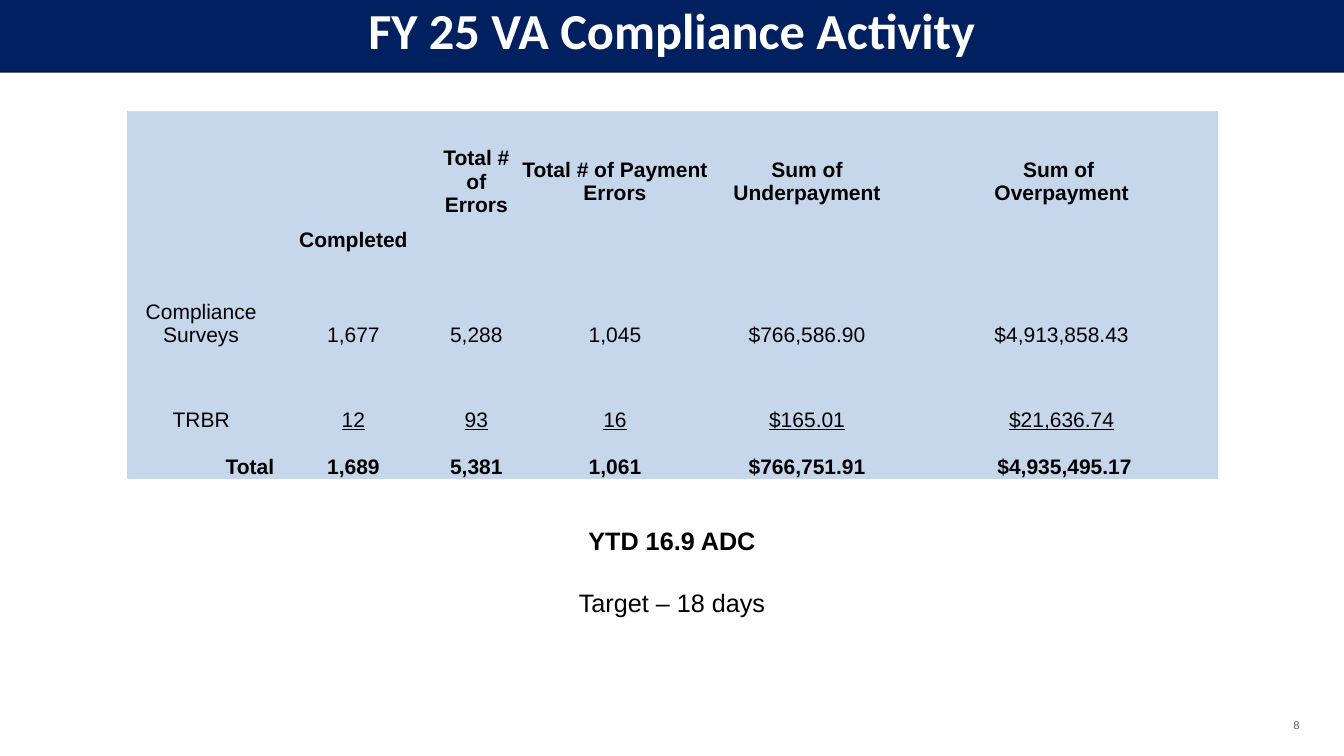
from pptx import Presentation
from pptx.dml.color import RGBColor
from pptx.enum.shapes import MSO_SHAPE
from pptx.enum.text import MSO_ANCHOR, MSO_AUTO_SIZE, PP_ALIGN
from pptx.util import Pt

PX = 9144  # 100 px to the inch
TOP, MIDDLE, BOTTOM = MSO_ANCHOR.TOP, MSO_ANCHOR.MIDDLE, MSO_ANCHOR.BOTTOM
CENTER, RIGHT = PP_ALIGN.CENTER, PP_ALIGN.RIGHT
NO_GRID_STYLE = "{2D5ABB26-0587-4C30-8999-92F81FD0307C}"
COLORS = {
    "navy": "002060",
    "shade": "13161E",
    "cell": "C7D7EB",
    "text": "000000",
    "white": "FFFFFF",
    "number": "595959",
}


def color(name):
    return RGBColor.from_string(COLORS[name])


def write(frame, text, size=15, font="Arial", ink="text", bold=False,
          underline=False, align=CENTER):
    """Fill a text frame, one paragraph for each line of text."""
    for index, line in enumerate(text.split("\n")):
        para = frame.paragraphs[0] if index == 0 else frame.add_paragraph()
        para.alignment = align
        span = para.add_run()
        span.text = line
        span.font.size = Pt(size)
        span.font.name = font
        span.font.bold = bold
        span.font.underline = underline
        span.font.color.rgb = color(ink)


deck = Presentation()
deck.slide_width, deck.slide_height = 1333 * PX, 750 * PX
page = deck.slides.add_slide(deck.slide_layouts[5])

# Title band, with a dark edge behind it
title = page.shapes.title
title.left, title.top, title.width, title.height = 0, -9 * PX, 1333 * PX, 80 * PX
title.fill.solid()
title.fill.fore_color.rgb = color("navy")
heading = title.text_frame
heading.auto_size = MSO_AUTO_SIZE.NONE
heading.word_wrap = True
heading.vertical_anchor = TOP
heading.margin_left = heading.margin_right = 0
heading.margin_top = heading.margin_bottom = 0
write(heading, "FY 25 VA Compliance Activity", size=36, font="Calibri",
      ink="white", bold=True)
heading.paragraphs[0].line_spacing = 1.14

edge = page.shapes.add_shape(MSO_SHAPE.RECTANGLE, 0, -8 * PX, 1333 * PX, 80 * PX)
edge.shadow.inherit = False
edge.fill.solid()
edge.fill.fore_color.rgb = color("shade")
edge.line.fill.background()
title.element.addprevious(edge.element)

# Compliance table
rows = [
    ["", "Completed", "Total # of Errors", "Total # of Payment Errors",
     "Sum of Underpayment", "Sum of \nOverpayment"],
    ["Compliance Surveys", "1,677", "5,288", "1,045", "$766,586.90", "$4,913,858.43"],
    ["TRBR", "12", "93", "16", "$165.01", "$21,636.74"],
    ["Total", "1,689", "5,381", "1,061", "$766,751.91", " $4,935,495.17"],
]
widths = [147, 155, 89, 186, 195, 310]
heights = [140, 94, 84, 47]
holder = page.shapes.add_table(len(rows), len(widths), 126 * PX, 110 * PX,
                               sum(widths) * PX, sum(heights) * PX)
for style in holder.element.iter("{*}tableStyleId"):
    style.text = NO_GRID_STYLE
table = holder.table
table.first_row = table.horz_banding = False
for column, width in zip(table.columns, widths):
    column.width = width * PX

for r, values in enumerate(rows):
    table.rows[r].height = heights[r] * PX
    for c, value in enumerate(values):
        cell = table.cell(r, c)
        cell.fill.solid()
        cell.fill.fore_color.rgb = color("cell")
        cell.margin_left = cell.margin_right = cell.margin_top = PX
        cell.margin_bottom = 0
        cell.vertical_anchor = MIDDLE if r == 0 and c > 1 else BOTTOM
        if value:
            write(cell.text_frame, value, bold=r in (0, 3),
                  underline=r == 2 and c > 0,
                  align=RIGHT if value == "Total" else CENTER)

# Days to complete, against target
box = page.shapes.add_textbox(560 * PX, 516 * PX, 213 * PX, 101 * PX)
box.text_frame.word_wrap = True
write(box.text_frame, "YTD 16.9 ADC\nTarget – 18 days", size=18)
result, target = box.text_frame.paragraphs
result.runs[0].font.bold = True
target.space_before = Pt(23)

# Page number
number = page.shapes.add_textbox(1247 * PX, 708 * PX, 42 * PX, 23 * PX).text_frame
number.word_wrap = True
number.vertical_anchor = MIDDLE
number.margin_left = number.margin_right = 0
number.margin_top = number.margin_bottom = 0
write(number, "8", size=8, ink="number", align=RIGHT)

deck.save("out.pptx")
